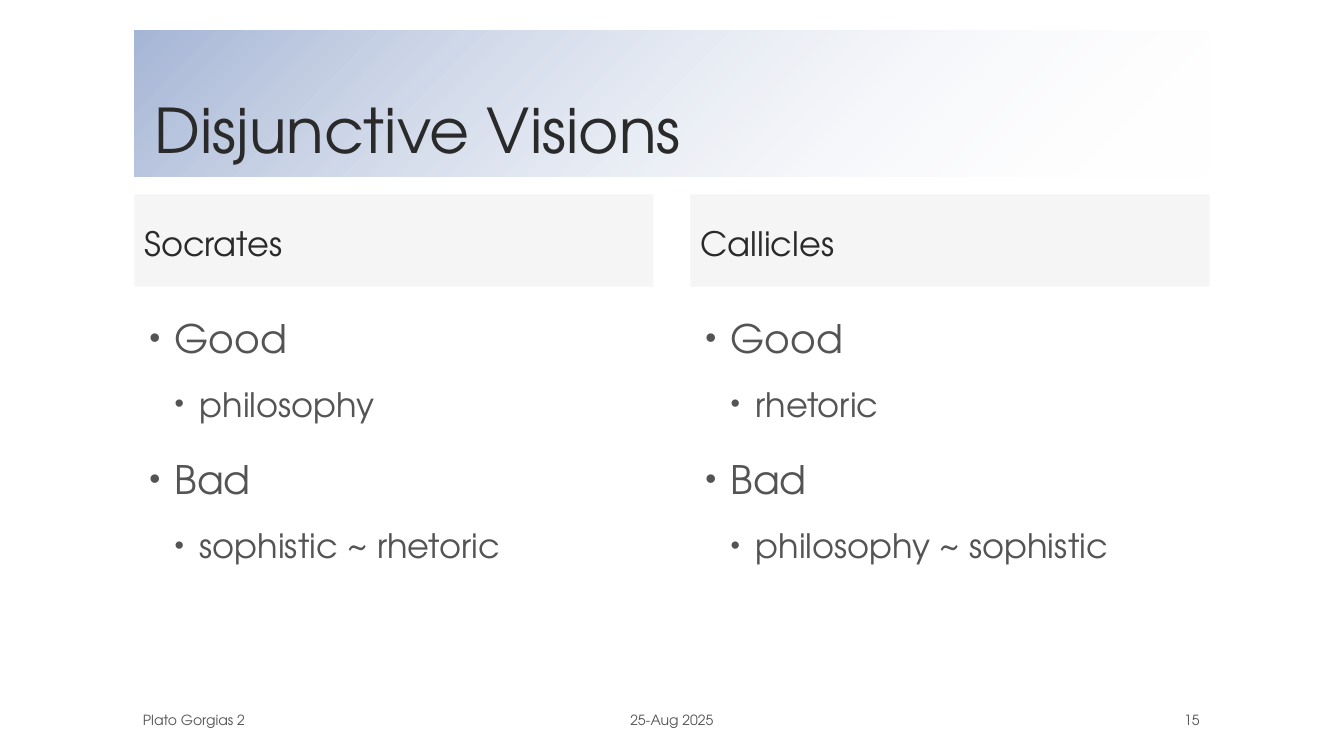
"""Build the slide that sets two visions side by side."""
from dataclasses import dataclass

from lxml import etree
from pptx import Presentation
from pptx.dml.color import RGBColor
from pptx.enum.shapes import MSO_SHAPE
from pptx.enum.text import MSO_ANCHOR, MSO_AUTO_SIZE, PP_ALIGN
from pptx.oxml.ns import qn
from pptx.util import Pt

RECT = MSO_SHAPE.RECTANGLE
TOP, MIDDLE, BOTTOM = MSO_ANCHOR.TOP, MSO_ANCHOR.MIDDLE, MSO_ANCHOR.BOTTOM
LEFT, CENTER, RIGHT = PP_ALIGN.LEFT, PP_ALIGN.CENTER, PP_ALIGN.RIGHT
FIXED = MSO_AUTO_SIZE.NONE

TITLE = "Disjunctive Visions"
SIDES = [
    ("Socrates", [(0, "Good"), (1, "philosophy"),
                  (0, "Bad"), (1, "sophistic ~ rhetoric")]),
    ("Callicles", [(0, "Good"), (1, "rhetoric"),
                   (0, "Bad"), (1, "philosophy ~ sophistic")]),
]
FOOTER = [
    ("Plato Gorgias 2", 95.04, 145.44, LEFT),
    ("25-Aug 2025", 441.36, 77.04, CENTER),
    ("15", 835.92, 28.08, RIGHT),
]


@dataclass(frozen=True)
class Theme:
    """Colours, font and type sizes."""
    font: str = "TeX Gyre Adventor"
    dark: str = "2A2A2A"
    gray: str = "545454"
    band: str = "BFBFBF"
    blue: str = "A6B6D6"
    white: str = "FFFFFF"
    title: int = 44
    head: int = 24
    levels: tuple = (28, 24)
    gaps: tuple = (18, 12)
    small: int = 10
    lines: float = 1.14


THEME = Theme()
WIDE, HIGH = 960, 540
EDGE = 96
SPAN = WIDE - 2 * EDGE
COL = 370.8
STEP = SPAN - COL
HANG = 18


def set_alpha(color, percent):
    """Make a colour element partly clear."""
    etree.SubElement(color, qn("a:alpha"), val=str(percent * 1000))


def set_frame(shape, anchor):
    """Fix the wrap, fit and anchor of a shape's text."""
    frame = shape.text_frame
    frame.word_wrap = True
    frame.auto_size = FIXED
    frame.vertical_anchor = anchor
    return frame


def add_text(para, text, size, color, lines=1.0, align=LEFT):
    """Add one styled run to a paragraph."""
    para.alignment = align
    para.line_spacing = lines
    run = para.add_run()
    run.text = text
    run.font.name = THEME.font
    run.font.size = Pt(size)
    run.font.color.rgb = RGBColor.from_string(color)


def add_bullet(para, level):
    """Give a paragraph a hanging bullet."""
    para.level = level
    para.space_before = Pt(THEME.gaps[level])
    props = para._p.get_or_add_pPr()
    props.set("marL", str(Pt(21.6 + HANG * level)))
    props.set("indent", str(-Pt(HANG)))
    tint = etree.SubElement(props, qn("a:buClr"))
    etree.SubElement(tint, qn("a:srgbClr"), val=THEME.gray)
    etree.SubElement(props, qn("a:buSzPct"), val="80000")
    etree.SubElement(props, qn("a:buFont"), typeface="Arial")
    etree.SubElement(props, qn("a:buChar"), char="•")


def draw_title(slide):
    """Place the title on its fading band."""
    title = slide.shapes.title
    title.left, title.top = Pt(EDGE), Pt(21.6)
    title.width, title.height = Pt(SPAN), Pt(104.6)
    title.fill.gradient()
    title.fill.gradient_angle = 315
    for stop, color, place in zip(title.fill.gradient_stops,
                                  (THEME.blue, THEME.white), (0, 1)):
        stop.color.rgb = RGBColor.from_string(color)
        stop.position = place
    set_alpha(list(title._element.iter(qn("a:srgbClr")))[-1], 0)
    frame = set_frame(title, BOTTOM)
    frame.margin_left = frame.margin_right = Pt(14.4)
    frame.margin_top = frame.margin_bottom = Pt(7.2)
    add_text(frame.paragraphs[0], TITLE, THEME.title, THEME.dark, 0.9)


def draw_side(slide, left, name, points):
    """Draw one column: its heading band and its bullets."""
    band = slide.shapes.add_shape(RECT, Pt(left), Pt(138.8), Pt(COL), Pt(66))
    band.shadow.inherit = False
    band.line.fill.background()
    band.fill.solid()
    band.fill.fore_color.rgb = RGBColor.from_string(THEME.band)
    set_alpha(next(band._element.iter(qn("a:srgbClr"))), 15)
    head = set_frame(band, MIDDLE).paragraphs[0]
    add_text(head, name, THEME.head, THEME.dark, THEME.lines)

    box = slide.shapes.add_textbox(Pt(left), Pt(216), Pt(COL), Pt(257.8))
    frame = set_frame(box, TOP)
    for index, (level, text) in enumerate(points):
        para = frame.add_paragraph() if index else frame.paragraphs[0]
        add_text(para, text, THEME.levels[level], THEME.gray, THEME.lines)
        add_bullet(para, level)


def main():
    """Build and save the slide."""
    deck = Presentation()
    deck.slide_width, deck.slide_height = Pt(WIDE), Pt(HIGH)
    slide = deck.slides.add_slide(deck.slide_layouts[5])
    draw_title(slide)
    for index, (name, points) in enumerate(SIDES):
        draw_side(slide, EDGE + index * STEP, name, points)
    for text, left, width, align in FOOTER:
        box = slide.shapes.add_textbox(Pt(left), Pt(504.7), Pt(width), Pt(20.9))
        para = set_frame(box, TOP).paragraphs[0]
        add_text(para, text, THEME.small, THEME.gray, align=align)
    deck.save("out.pptx")


if __name__ == "__main__":
    main()
